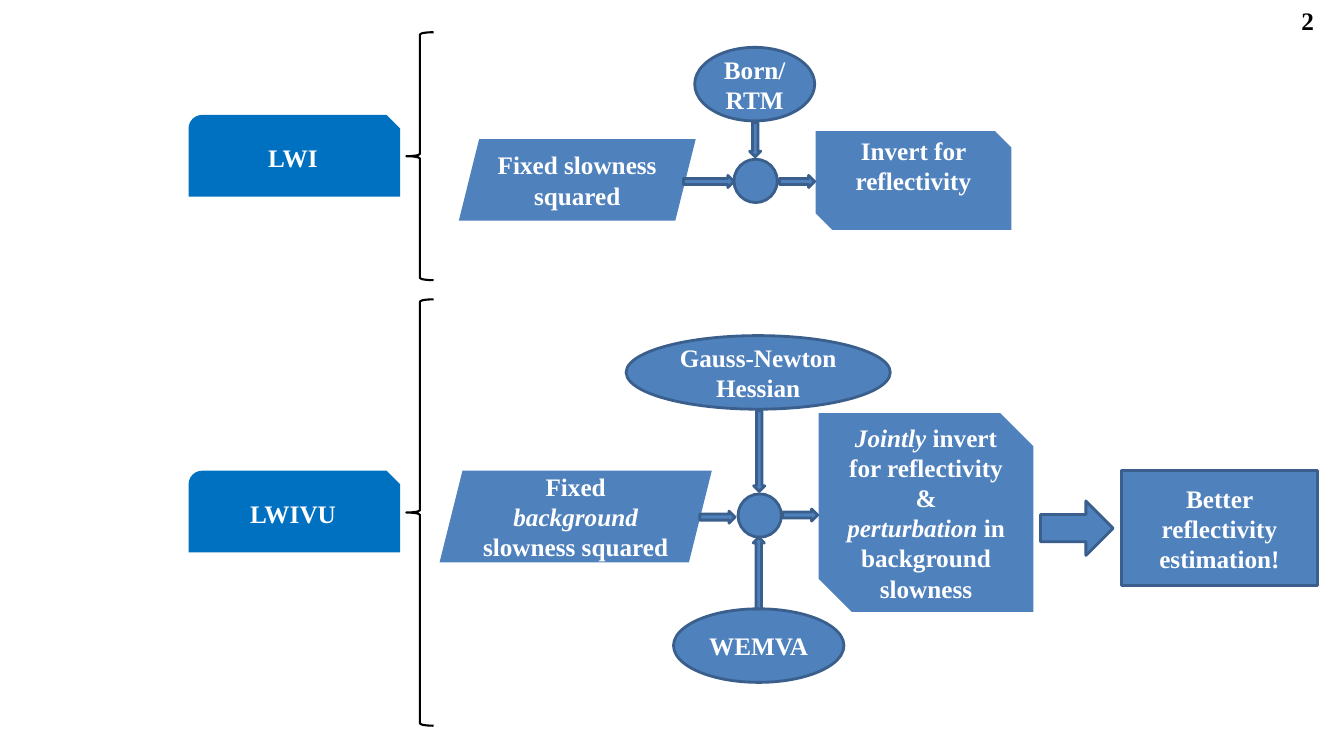
from pptx import Presentation
from pptx import util as u
from pptx.dml.color import RGBColor
from pptx.enum import shapes, text

SHAPE = shapes.MSO_SHAPE
COLORS = {
    "method": "0070C0",
    "step": "4F81BD",
    "outline": "3A5F8C",
    "white": "FFFFFF",
    "black": "000000",
}


def rgb(name):
    return RGBColor.from_string(COLORS[name])


def add_block(slide, kind, box, fill=None, outline=None, width=2):
    """Add a preset shape at box = (left, top, width, height) in inches."""
    block = slide.shapes.add_shape(kind, *map(u.Inches, box))
    block.shadow.inherit = False
    if fill:
        block.fill.solid()
        block.fill.fore_color.rgb = rgb(fill)
    else:
        block.fill.background()
    if outline:
        block.line.color.rgb = rgb(outline)
        block.line.width = u.Pt(width)
    else:
        block.line.fill.background()
    return block


def write(block, *paragraphs, color="white", align=text.PP_ALIGN.CENTER):
    """Fill a block with bold paragraphs; *stars* enclose italic words."""
    frame = block.text_frame
    frame.word_wrap = True
    frame.vertical_anchor = text.MSO_ANCHOR.MIDDLE
    for i, wording in enumerate(paragraphs):
        paragraph = frame.add_paragraph() if i else frame.paragraphs[0]
        paragraph.alignment = align
        for j, part in enumerate(wording.split("*")):
            if part:
                run = paragraph.add_run()
                run.text = part
                if j % 2:
                    run.font.italic = True
        font = paragraph.font
        font.name = "Times New Roman"
        font.size = u.Pt(18)
        font.bold = True
        font.color.rgb = rgb(color)


def add_method(slide, name, top):
    method = add_block(slide, SHAPE.SNIP_ROUND_RECTANGLE,
                       (1.87, top, 2.1, 0.81), "method")
    write(method, name)


def add_step(slide, kind, box, *paragraphs, outline=None):
    step = add_block(slide, kind, box, "step", outline)
    write(step, *paragraphs)
    return step


def add_operator(slide, box, name):
    add_step(slide, SHAPE.OVAL, box, name, outline="outline")


def add_junction(slide, left, top):
    add_block(slide, SHAPE.OVAL, (left, top, 0.43, 0.43), "step", "outline")


def add_arrow(slide, box, rotation=0):
    arrow = add_block(slide, SHAPE.RIGHT_ARROW, box, "step", "outline")
    arrow.rotation = rotation


def add_brace(slide, top, height):
    add_block(slide, SHAPE.LEFT_BRACE, (4.03, top, 0.27, height),
              outline="black", width=1.5)


def add_lwi(slide):
    add_method(slide, "LWI", 1.14)
    add_brace(slide, 0.32, 2.46)
    reflectivity = add_step(slide, SHAPE.SNIP_2_DIAG_RECTANGLE,
                            (8.09, 1.3, 1.94, 0.98), "Invert for reflectivity")
    # Lift the two lines above the middle of the block
    reflectivity.text_frame.margin_bottom = u.Inches(0.35)
    add_step(slide, SHAPE.PARALLELOGRAM, (4.55, 1.38, 2.35, 0.81),
             "Fixed slowness squared")
    add_operator(slide, (6.89, 0.47, 1.19, 0.73), "Born/RTM")
    add_junction(slide, 7.28, 1.58)
    add_arrow(slide, (7.32, 1.33, 0.34, 0.11), 90)
    add_arrow(slide, (6.78, 1.74, 0.5, 0.12))
    add_arrow(slide, (7.73, 1.74, 0.35, 0.12))


def add_lwivu(slide):
    add_method(slide, "LWIVU", 4.67)
    add_brace(slide, 2.97, 4.23)
    add_step(slide, SHAPE.SNIP_2_DIAG_RECTANGLE, (8.12, 4.1, 2.13, 1.97),
             "*Jointly* invert for reflectivity &",
             "*perturbation* in background slowness")
    add_step(slide, SHAPE.PARALLELOGRAM, (4.36, 4.67, 2.7, 0.91),
             "Fixed *background* slowness squared")
    add_arrow(slide, (7.13, 4.42, 0.8, 0.11), 90)
    add_operator(slide, (6.21, 3.33, 2.62, 0.73), "Gauss-Newton Hessian")
    add_operator(slide, (6.68, 6.04, 1.69, 0.73), "WEMVA")
    add_junction(slide, 7.32, 4.9)
    add_arrow(slide, (7.17, 5.63, 0.71, 0.11), 270)
    add_arrow(slide, (6.94, 5.07, 0.35, 0.12))
    add_arrow(slide, (7.76, 5.05, 0.35, 0.12))
    # Outcome
    add_step(slide, SHAPE.RECTANGLE, (11.12, 4.67, 1.95, 1.14),
             "Better reflectivity estimation!", outline="outline")
    add_arrow(slide, (10.32, 4.97, 0.72, 0.54))


def main():
    deck = Presentation()
    deck.slide_width, deck.slide_height = u.Inches(13.33), u.Inches(7.5)
    slide = deck.slides.add_slide(deck.slide_layouts[6])
    add_lwi(slide)
    add_lwivu(slide)
    # Page number
    page = add_block(slide, SHAPE.RECTANGLE, (12.81, 0, 0.46, 0.41), "white")
    write(page, "2", color="black", align=text.PP_ALIGN.LEFT)
    deck.save("out.pptx")


if __name__ == "__main__":
    main()
